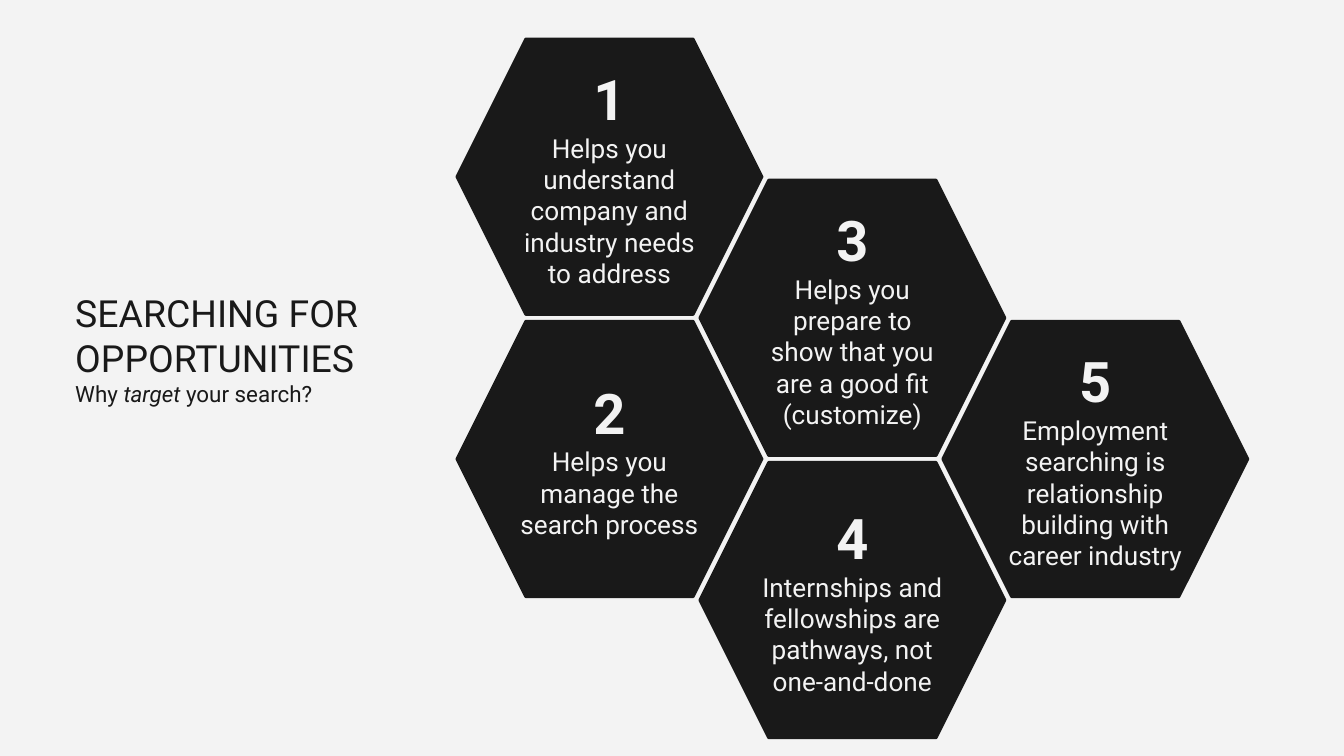
from dataclasses import dataclass

from pptx import Presentation
from pptx.dml.color import RGBColor
from pptx.enum.shapes import MSO_SHAPE
from pptx.enum.text import MSO_ANCHOR, MSO_AUTO_SIZE, PP_ALIGN
from pptx.util import Inches, Pt

INK = "191919"
PAPER = "F3F3F3"
GRID_LEFT, GRID_TOP = 3.4, 0.29
CELL_WIDTH, CELL_HEIGHT, CELL_GAP = 2.27, 2.05, 0.05
CORNER = 0.25
COLUMN_STEP = CELL_WIDTH - CORNER * CELL_HEIGHT + CELL_GAP
HALF_ROW_STEP = (CELL_HEIGHT + CELL_GAP) / 2

FRAME_FORMAT = {
    "word_wrap": True,
    "auto_size": MSO_AUTO_SIZE.NONE,
    "margin_left": Inches(0.1),
    "margin_right": Inches(0.1),
    "margin_top": Inches(0.1),
    "margin_bottom": Inches(0.1),
}


@dataclass(frozen=True)
class Reason:
    column: int
    half_row: int
    statement: str


@dataclass(frozen=True)
class Phrase:
    wording: str
    size: float
    color: str = INK
    bold: bool = False
    italic: bool = False


REASONS = [
    Reason(0, 0, "Helps you understand company and industry needs to address"),
    Reason(0, 2, "Helps you manage the search process"),
    Reason(1, 1, "Helps you prepare to show that you are a good fit (customize)"),
    Reason(1, 3, "Internships and fellowships are pathways, not one-and-done"),
    Reason(2, 2, "Employment searching is relationship building with career industry"),
]


def rgb(value: str) -> RGBColor:
    return RGBColor.from_string(value)


def apply_format(target, values: dict) -> None:
    for attribute, value in values.items():
        setattr(target, attribute, value)


def write(frame, lines: list[list[Phrase]], anchor, alignment, spacing: float = 1.0) -> None:
    apply_format(frame, FRAME_FORMAT | {"vertical_anchor": anchor})
    for index, phrases in enumerate(lines):
        paragraph = frame.add_paragraph() if index else frame.paragraphs[0]
        apply_format(paragraph, {
            "alignment": alignment,
            "line_spacing": spacing,
            "space_before": Pt(0),
            "space_after": Pt(0),
        })
        for phrase in phrases:
            run = paragraph.add_run()
            run.text = phrase.wording
            apply_format(run.font, {
                "name": "Roboto",
                "size": Pt(phrase.size),
                "bold": phrase.bold,
                "italic": phrase.italic,
            })
            run.font.color.rgb = rgb(phrase.color)


def place(placeholder, left: float, top: float, width: float, height: float) -> None:
    apply_format(placeholder, {
        "left": Inches(left),
        "top": Inches(top),
        "width": Inches(width),
        "height": Inches(height),
    })


def draw_reason(slide, number: int, reason: Reason) -> None:
    hexagon = slide.shapes.add_shape(
        MSO_SHAPE.HEXAGON,
        Inches(GRID_LEFT + reason.column * COLUMN_STEP),
        Inches(GRID_TOP + reason.half_row * HALF_ROW_STEP),
        Inches(CELL_WIDTH),
        Inches(CELL_HEIGHT),
    )
    hexagon.adjustments[0] = CORNER
    hexagon.shadow.inherit = False
    hexagon.fill.solid()
    hexagon.fill.fore_color.rgb = rgb(INK)
    hexagon.line.color.rgb = rgb(INK)
    hexagon.line.width = Pt(1.5)
    lines = [
        [Phrase(str(number), 30, PAPER, bold=True)],
        [Phrase(reason.statement, 14, PAPER)],
    ]
    write(hexagon.text_frame, lines, MSO_ANCHOR.MIDDLE, PP_ALIGN.CENTER)


def main() -> None:
    presentation = Presentation()
    presentation.slide_width = Inches(10)
    presentation.slide_height = presentation.slide_width * 9 // 16
    slide = presentation.slides.add_slide(presentation.slide_layouts[0])
    slide.background.fill.solid()
    slide.background.fill.fore_color.rgb = rgb(PAPER)

    heading = slide.shapes.title
    place(heading, 0.46, 2.06, 2.73, 0.75)
    write(heading.text_frame, [[Phrase("SEARCHING FOR OPPORTUNITIES", 20)]],
          MSO_ANCHOR.TOP, PP_ALIGN.LEFT)

    question = slide.placeholders[1]
    place(question, 0.46, 2.61, 2.02, 0.61)
    question_line = [
        Phrase("Why ", 12),
        Phrase("target", 12, italic=True),
        Phrase(" your search?", 12),
    ]
    write(question.text_frame, [question_line], MSO_ANCHOR.MIDDLE, PP_ALIGN.LEFT, 1.15)

    for number, reason in enumerate(REASONS, start=1):
        draw_reason(slide, number, reason)

    presentation.save("out.pptx")


if __name__ == "__main__":
    main()
